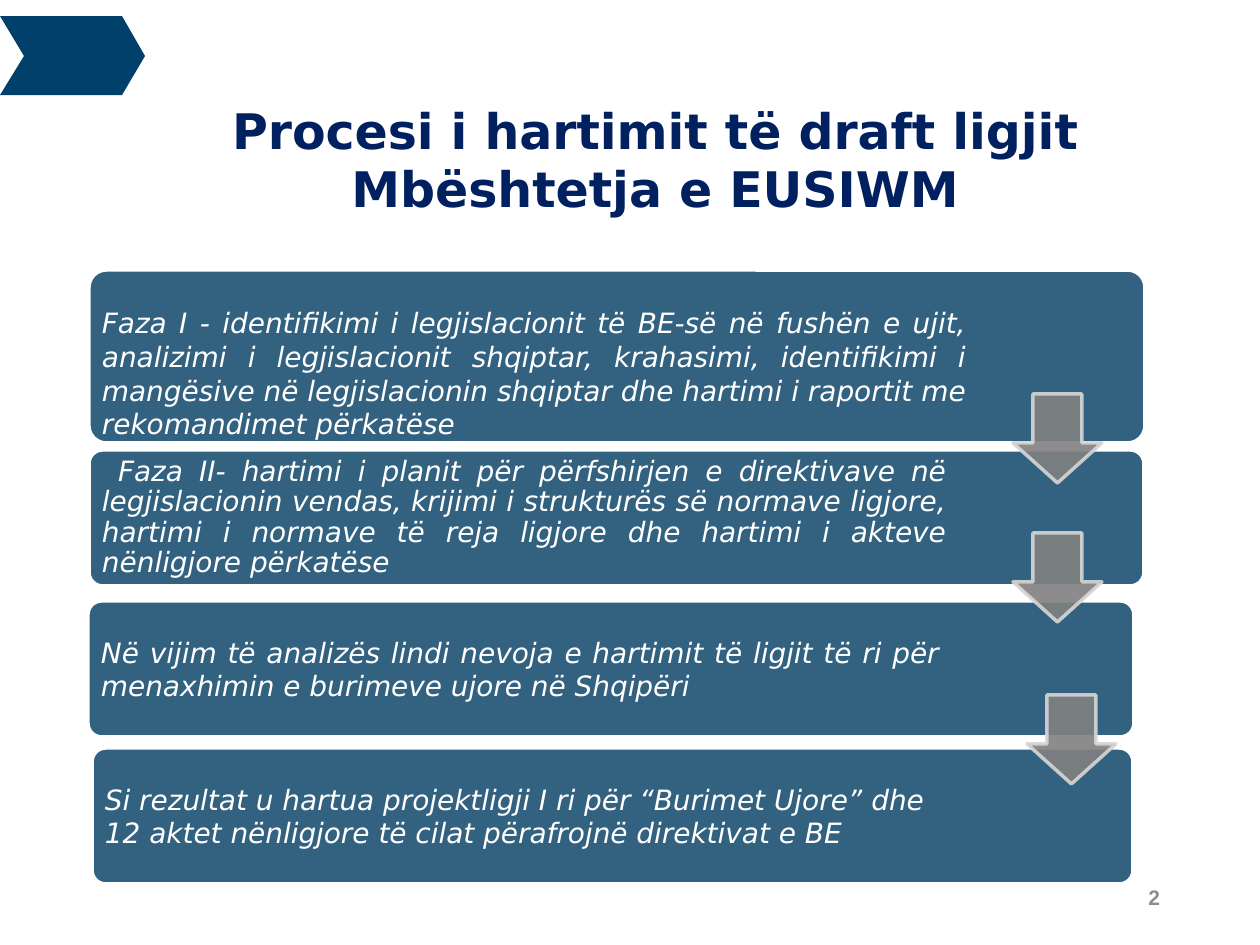
from dataclasses import dataclass

from lxml.etree import SubElement
from pptx import Presentation
from pptx.dml.color import RGBColor as Rgb
from pptx.enum.shapes import MSO_SHAPE as Shape
from pptx.enum.text import MSO_ANCHOR as Anchor, MSO_AUTO_SIZE as Fit, PP_ALIGN as Align
from pptx.oxml.ns import qn
from pptx.util import Pt

SCALE = 914400 / 126


@dataclass(frozen=True)
class Theme:
    navy: str = "00406A"
    title: str = "002060"
    card: str = "326280"
    white: str = "FFFFFF"
    arrow: str = "808080"
    edge: str = "D6D6D6"
    number: str = "8C8C8C"
    font: str = "DejaVu Sans"
    plain: str = "Arial"
    head: int = 28
    body: int = 16
    small: int = 12
    stroke: int = 2


@dataclass(frozen=True)
class Box:
    left: int
    top: int
    width: int
    height: int

    def emu(self) -> tuple[int, ...]:
        return tuple(px(n) for n in (self.left, self.top, self.width, self.height))


@dataclass(frozen=True)
class Card:
    box: Box
    wide: int  # width of the text
    text: str
    align: Align = Align.JUSTIFY
    lines: float = 1.0
    drop: int = 0  # gap above text that hangs from the top


THEME = Theme()
CARDS = (
    Card(Box(89, 270, 1056, 173), 883,
         "Faza I - identifikimi i legjislacionit të BE-së në fushën e ujit, "
         "analizimi i legjislacionit shqiptar, krahasimi, identifikimi i mangësive "
         "në legjislacionin shqiptar dhe hartimi i raportit me rekomandimet përkatëse",
         drop=32),
    Card(Box(89, 450, 1055, 136), 863,
         " Faza II- hartimi i planit për përfshirjen e direktivave në legjislacionin "
         "vendas, krijimi i strukturës së normave ligjore, hartimi i normave të reja "
         "ligjore dhe hartimi i akteve nënligjore përkatëse", lines=0.9),
    Card(Box(88, 601, 1046, 136), 857,
         "Në vijim të analizës lindi nevoja e hartimit të ligjit të ri për "
         "menaxhimin e burimeve ujore në Shqipëri"),
    Card(Box(92, 748, 1041, 136), 852,
         "Si rezultat u hartua projektligji I ri për “Burimet Ujore” dhe "
         "12 aktet nënligjore të cilat përafrojnë direktivat e BE", Align.LEFT),
)
ARROWS = ((1013, 394), (1013, 533), (1027, 695))
CHEVRON = ((0, 16), (24, 56), (0, 95), (122, 95), (145, 56), (122, 16))


def px(n: int) -> int:
    return round(n * SCALE)


def color(code: str) -> Rgb:
    return Rgb.from_string(code)


def paint(shape, fill: str, line: str | None = None) -> None:
    shape.shadow.inherit = False
    shape.fill.solid()
    shape.fill.fore_color.rgb = color(fill)
    if line:
        shape.line.color.rgb = color(line)
        shape.line.width = Pt(THEME.stroke)
    else:
        shape.line.fill.background()


def fade(shape, share: int) -> None:
    """Set the opacity of fill and line, in percent."""
    for node in shape.element.spPr.iter(qn("a:srgbClr")):
        SubElement(node, qn("a:alpha"), val=str(share * 1000))


def frame(shape, pad: int, top: int, anchor: Anchor):
    """Set the margins and anchor of a text frame and return it."""
    text = shape.text_frame
    text.word_wrap = True
    text.auto_size = Fit.NONE
    text.vertical_anchor = anchor
    text.margin_left = text.margin_right = text.margin_bottom = px(pad)
    text.margin_top = px(top)
    return text


def write(para, text: str, size: int, tone: str, align: Align,
          face: str = THEME.font, bold: bool = False, italic: bool = False) -> None:
    para.alignment = align
    run = para.add_run()
    run.text = text
    font = run.font
    font.name, font.size, font.bold, font.italic = face, Pt(size), bold, italic
    font.color.rgb = color(tone)


def draw_title(slide) -> None:
    title = slide.shapes.title
    title.left, title.top, title.width, title.height = Box(84, 24, 1142, 180).emu()
    text = frame(title, 13, 76, Anchor.TOP)
    first, second = text.paragraphs[0], text.add_paragraph()
    for para, words in ((first, "Procesi i hartimit të draft ligjit"),
                        (second, "Mbështetja e EUSIWM")):
        write(para, words, THEME.head, THEME.title, Align.CENTER, bold=True)


def draw_mark(slide) -> None:
    pen = slide.shapes.build_freeform(*CHEVRON[0], scale=SCALE)
    pen.add_line_segments(CHEVRON[1:], close=True)
    paint(pen.convert_to_shape(), THEME.navy)


def draw_card(slide, card: Card) -> None:
    box = card.box
    back = slide.shapes.add_shape(Shape.ROUNDED_RECTANGLE, *box.emu())
    back.adjustments[0] = 0.1
    paint(back, THEME.card, THEME.white)
    area = Box(box.left + 4, box.top + 4, card.wide, box.height - 8)
    label = slide.shapes.add_textbox(*area.emu())
    anchor = Anchor.TOP if card.drop else Anchor.MIDDLE
    para = frame(label, 9, card.drop or 9, anchor).paragraphs[0]
    para.line_spacing = card.lines
    write(para, card.text, THEME.body, THEME.white, card.align, italic=True)


def draw_arrow(slide, left: int, top: int) -> None:
    arrow = slide.shapes.add_shape(Shape.DOWN_ARROW, *Box(left, top, 89, 89).emu())
    arrow.adjustments[0], arrow.adjustments[1] = 0.55, 0.45
    paint(arrow, THEME.arrow, THEME.edge)
    fade(arrow, 90)


def draw_number(slide) -> None:
    label = slide.shapes.add_textbox(*Box(890, 876, 283, 50).emu())
    para = frame(label, 13, 6, Anchor.MIDDLE).paragraphs[0]
    write(para, "2", THEME.small, THEME.number, Align.RIGHT, THEME.plain, bold=True)


def main() -> None:
    deck = Presentation()
    deck.slide_width, deck.slide_height = px(1260), px(945)
    slide = deck.slides.add_slide(deck.slide_layouts[5])
    draw_mark(slide)
    draw_number(slide)
    draw_title(slide)
    for card in CARDS:
        draw_card(slide, card)
    for left, top in ARROWS:
        draw_arrow(slide, left, top)
    deck.save("out.pptx")


if __name__ == "__main__":
    main()
